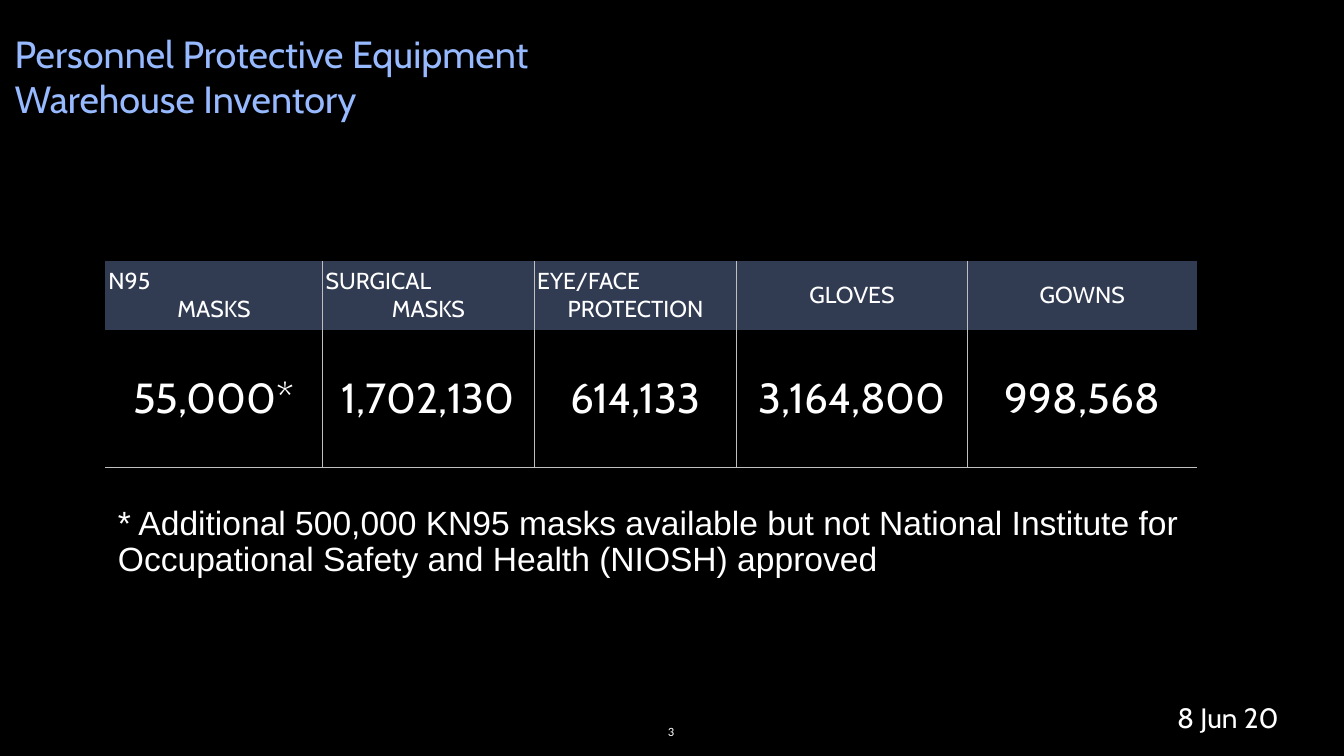
from lxml import etree
from pptx import Presentation
from pptx.dml.color import RGBColor
from pptx.enum.text import MSO_ANCHOR, PP_ALIGN
from pptx.oxml.ns import qn
from pptx.util import Inches, Pt

TOP, MIDDLE, BOTTOM = MSO_ANCHOR.TOP, MSO_ANCHOR.MIDDLE, MSO_ANCHOR.BOTTOM
LEFT, CENTER = PP_ALIGN.LEFT, PP_ALIGN.CENTER

SLIDE_W, SLIDE_H = Inches(26.67), Inches(15)
INSET = Inches(0.06)
COLORS = {
    "background": "000000",
    "title": "96B9FF",
    "text": "FFFFFF",
    "header": "313C53",
    "rule": "BFBFBF",
}
INVENTORY = [
    ("N95\nMASKS", "55,000*"),
    ("SURGICAL\nMASKS", "1,702,130"),
    ("EYE/FACE\nPROTECTION", "614,133"),
    ("GLOVES", "3,164,800"),
    ("GOWNS", "998,568"),
]
# Table columns and rows in percent of the slide's width and height
COLUMN_SHARES = [16.16, 15.75, 15.07, 17.14, 17.14]
ROW_SHARES = [9.2, 18.2]


def across(percent):
    return int(SLIDE_W * percent / 100)


def down(percent):
    return int(SLIDE_H * percent / 100)


def rgb(name):
    return RGBColor.from_string(COLORS[name])


def format_text(frame, font, size, color="text", align=LEFT, spacing=None):
    for paragraph in frame.paragraphs:
        paragraph.alignment = align
        paragraph.line_spacing = spacing
        for run in paragraph.runs:
            run.font.name = font
            run.font.size = Pt(size)
            run.font.color.rgb = rgb(color)


def set_frame(frame, anchor, wrap=True):
    frame.word_wrap = wrap
    frame.vertical_anchor = anchor
    frame.margin_left = frame.margin_right = INSET
    frame.margin_top = frame.margin_bottom = INSET


def add_title(slide, text):
    title = slide.shapes.title
    title.left, title.top = across(0.86), down(3.6)
    title.width, title.height = across(60.03), down(16.13)
    title.text_frame.text = text
    set_frame(title.text_frame, TOP)
    format_text(title.text_frame, "Cabin", 54, "title")


def add_label(slide, text, box, font, size, anchor=MIDDLE, align=LEFT,
              spacing=None, wrap=True):
    left, top, width, height = box
    label = slide.shapes.add_textbox(across(left), down(top),
                                     across(width), down(height))
    label.text_frame.text = text
    set_frame(label.text_frame, anchor, wrap)
    format_text(label.text_frame, font, size, align=align, spacing=spacing)


def set_borders(cell, ruled_sides):
    properties = cell._tc.get_or_add_tcPr()
    for position, side in enumerate("LRTB"):
        line = etree.Element(qn(f"a:ln{side}"), w=str(Pt(1)))
        if side in ruled_sides:
            fill = etree.SubElement(line, qn("a:solidFill"))
            etree.SubElement(fill, qn("a:srgbClr"), val=COLORS["rule"])
        else:
            etree.SubElement(line, qn("a:noFill"))
        properties.insert(position, line)


def fill_cell(cell, text, size):
    cell.text_frame.text = text
    cell.vertical_anchor = MIDDLE
    cell.margin_left = cell.margin_right = INSET
    cell.margin_top = cell.margin_bottom = INSET
    format_text(cell.text_frame, "Cabin", size, align=CENTER)
    # The first line of a two-line heading sits at the left edge
    if len(cell.text_frame.paragraphs) > 1:
        cell.text_frame.paragraphs[0].alignment = LEFT


def add_inventory_table(slide):
    table = slide.shapes.add_table(
        len(ROW_SHARES), len(INVENTORY), across(7.84), down(34.47),
        across(sum(COLUMN_SHARES)), down(sum(ROW_SHARES))).table
    table.first_row = table.horz_banding = False
    for row, share in zip(table.rows, ROW_SHARES):
        row.height = down(share)
    for index, (heading, stock) in enumerate(INVENTORY):
        table.columns[index].width = across(COLUMN_SHARES[index])
        sides = "L" if index > 0 else ""
        sides += "R" if index < len(INVENTORY) - 1 else ""

        heading_cell, stock_cell = table.cell(0, index), table.cell(1, index)
        fill_cell(heading_cell, heading, 33)
        heading_cell.fill.solid()
        heading_cell.fill.fore_color.rgb = rgb("header")
        set_borders(heading_cell, sides)

        fill_cell(stock_cell, stock, 60)
        stock_cell.fill.background()
        set_borders(stock_cell, sides + "B")


def main():
    presentation = Presentation()
    presentation.slide_width, presentation.slide_height = SLIDE_W, SLIDE_H
    slide = presentation.slides.add_slide(presentation.slide_layouts[5])
    slide.background.fill.solid()
    slide.background.fill.fore_color.rgb = rgb("background")

    add_title(slide, "Personnel Protective Equipment\vWarehouse Inventory")
    add_inventory_table(slide)

    # Date, footnote and page number
    add_label(slide, "8 Jun 20", (87.36, 90.6, 9.6, 9), "Cabin", 40,
              spacing=0.9)
    add_label(slide, "* Additional 500,000 KN95 masks available but not "
              "National Institute for Occupational Safety and Health (NIOSH) "
              "approved", (8.55, 64.4, 80.5, 14.67), "Arial", 48, spacing=0.9)
    add_label(slide, "3", (49.19, 95.4, 1.5, 2.73), "Calibri", 18,
              anchor=BOTTOM, align=CENTER, wrap=False)

    presentation.save("out.pptx")


if __name__ == "__main__":
    main()
